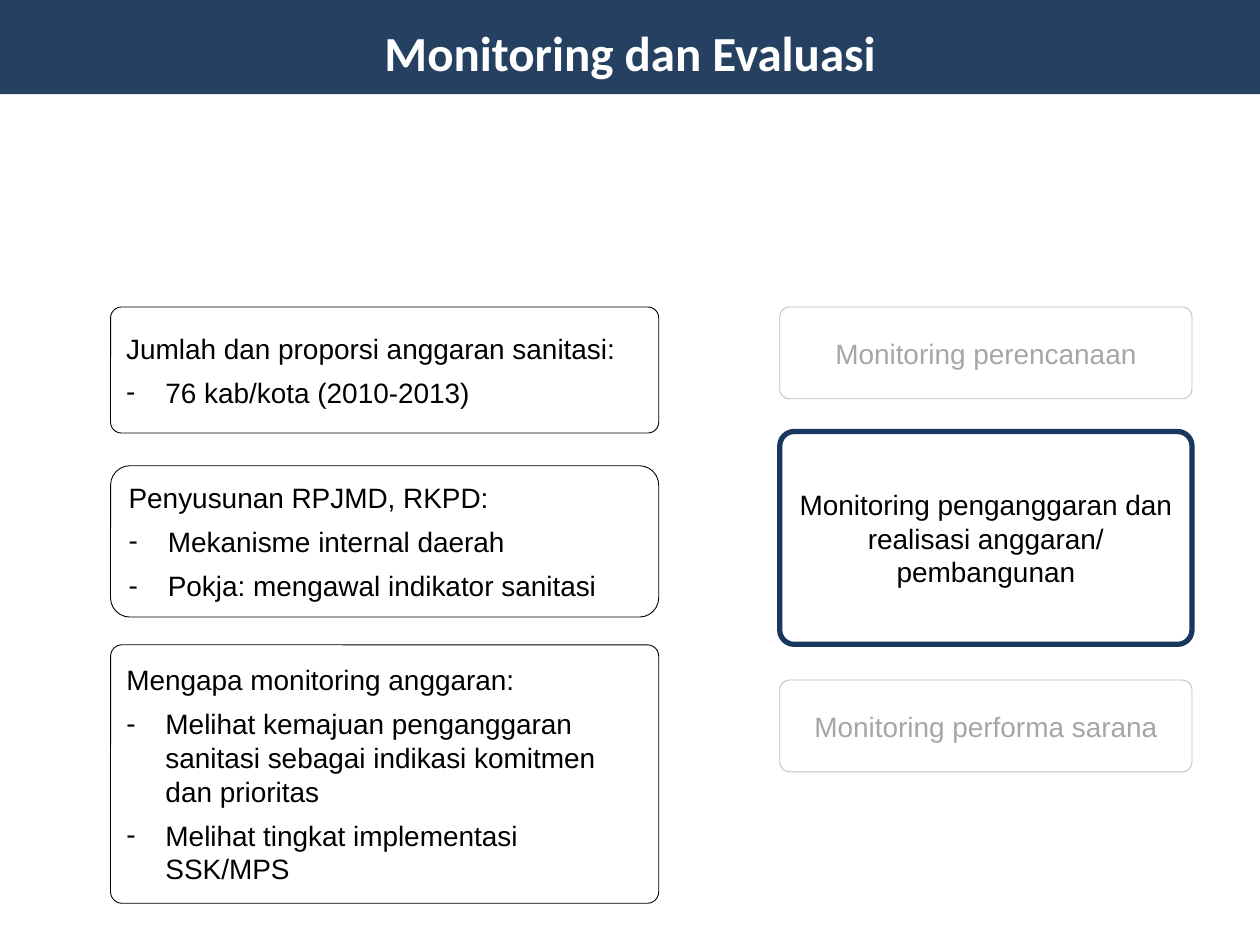
from dataclasses import dataclass

from lxml.etree import SubElement
from pptx import Presentation
from pptx.dml.color import RGBColor as RGB
from pptx.enum.shapes import MSO_SHAPE as SHAPE
from pptx.enum.text import MSO_ANCHOR as ANCHOR, PP_ALIGN as ALIGN
from pptx.oxml.ns import qn
from pptx.util import Cm, Pt


@dataclass(frozen=True)
class Theme:
    band: str = "254061"
    accent: str = "17375E"
    white: str = "FFFFFF"
    black: str = "000000"
    faint_line: str = "BFBFBF"
    faint_text: str = "A6A6A6"
    title_font: str = "Calibri"
    body_font: str = "Arial"
    title_size: int = 28
    body_size: int = 16
    gap_after: int = 6
    corner: float = 0.2
    hanging: float = 0.79


T = Theme()

STYLES = {
    "plain": {"line": T.black, "width": 0.5, "text": T.black},
    "faint": {"line": T.faint_line, "width": 0.5, "text": T.faint_text},
    "current": {"line": T.accent, "width": 3, "text": T.black},
}

FINDINGS = [
    (0, 2.54, 0.22, "Jumlah dan proporsi anggaran sanitasi:",
     ["76 kab/kota (2010-2013)"]),
    (3.2, 3.05, 0.39, "Penyusunan RPJMD, RKPD:",
     ["Mekanisme internal daerah", "Pokja: mengawal indikator sanitasi"]),
    (6.81, 5.21, 0.23, "Mengapa monitoring anggaran:",
     ["Melihat kemajuan penganggaran sanitasi sebagai indikasi komitmen "
      "dan prioritas",
      "Melihat tingkat implementasi SSK/MPS"]),
]

STAGES = [
    (0, 1.85, "Monitoring perencanaan", "faint", None),
    (2.51, 4.29,
     "Monitoring penganggaran dan realisasi anggaran/ pembangunan",
     "current", None),
    (7.52, 1.85, "Monitoring performa sarana", "faint", 31),
]


def set_attrs(obj, values):
    for name, value in values.items():
        setattr(obj, name, value)


def write(p, text, font, size, color, bold=False):
    r = p.add_run()
    r.text = text
    set_attrs(r.font, {"name": font, "size": Pt(size), "bold": bold})
    r.font.color.rgb = RGB.from_string(color)


def add_dash(p):
    pPr = p._p.get_or_add_pPr()
    pPr.set("marL", str(Cm(T.hanging)))
    pPr.set("indent", str(-Cm(T.hanging)))
    SubElement(pPr, qn("a:buFont"), typeface=T.body_font)
    SubElement(pPr, qn("a:buChar"), char="-")


def set_opacity(sp, percent):
    color = sp._element.spPr.find(qn("a:solidFill"))[0]
    SubElement(color, qn("a:alpha"), val=str(percent * 1000))


def add_card(s, box, radius, style, lines, align):
    look = STYLES[style]
    sp = s.shapes.add_shape(SHAPE.ROUNDED_RECTANGLE, *map(Cm, box))
    sp.shadow.inherit = False
    sp.adjustments[0] = radius / min(box[2:])
    sp.fill.solid()
    sp.fill.fore_color.rgb = RGB.from_string(T.white)
    sp.line.color.rgb = RGB.from_string(look["line"])
    sp.line.width = Pt(look["width"])
    tf = sp.text_frame
    set_attrs(tf, {"word_wrap": True, "vertical_anchor": ANCHOR.MIDDLE})
    for i, (text, dashed) in enumerate(lines):
        p = tf.add_paragraph() if i else tf.paragraphs[0]
        set_attrs(p, {"alignment": align, "space_after": Pt(T.gap_after)})
        if dashed:
            add_dash(p)
        write(p, text, T.body_font, T.body_size, look["text"])
    return sp


def add_header(s, left, top, width, height):
    sp = s.shapes.add_shape(SHAPE.RECTANGLE, *map(Cm, (left, top, width, height)))
    sp.shadow.inherit = False
    sp.fill.solid()
    sp.fill.fore_color.rgb = RGB.from_string(T.band)
    sp.line.fill.background()
    side, drop = 1.85, 0.23
    tf = s.shapes.add_textbox(Cm(left + side), Cm(top + drop),
                              Cm(width - 2 * side), Cm(height - drop)).text_frame
    set_attrs(tf, {"word_wrap": True, "vertical_anchor": ANCHOR.MIDDLE,
                   "margin_left": 0, "margin_right": 0,
                   "margin_top": 0, "margin_bottom": 0})
    p = tf.paragraphs[0]
    p.alignment = ALIGN.CENTER
    write(p, "Monitoring dan Evaluasi", T.title_font, T.title_size, T.white, True)


def add_findings(s, left, top, width):
    for offset, height, radius, heading, points in FINDINGS:
        lines = [(heading, False)] + [(point, True) for point in points]
        add_card(s, (left, top + offset, width, height), radius, "plain",
                 lines, ALIGN.LEFT)


def add_stages(s, left, top, width):
    for offset, height, text, style, opacity in STAGES:
        radius = 0.29 if style == "current" else T.corner
        sp = add_card(s, (left, top + offset, width, height), radius, style,
                      [(text, False)], ALIGN.CENTER)
        if opacity:
            set_opacity(sp, opacity)


def main():
    prs = Presentation()
    set_attrs(prs, {"slide_width": Cm(25.4), "slide_height": Cm(19.05)})
    s = prs.slides.add_slide(prs.slide_layouts[6])
    add_header(s, 0, -0.05, 25.4, 1.95)
    add_findings(s, 2.23, 6.19, 11.05)
    add_stages(s, 15.72, 6.19, 8.31)
    prs.save("out.pptx")


if __name__ == "__main__":
    main()
